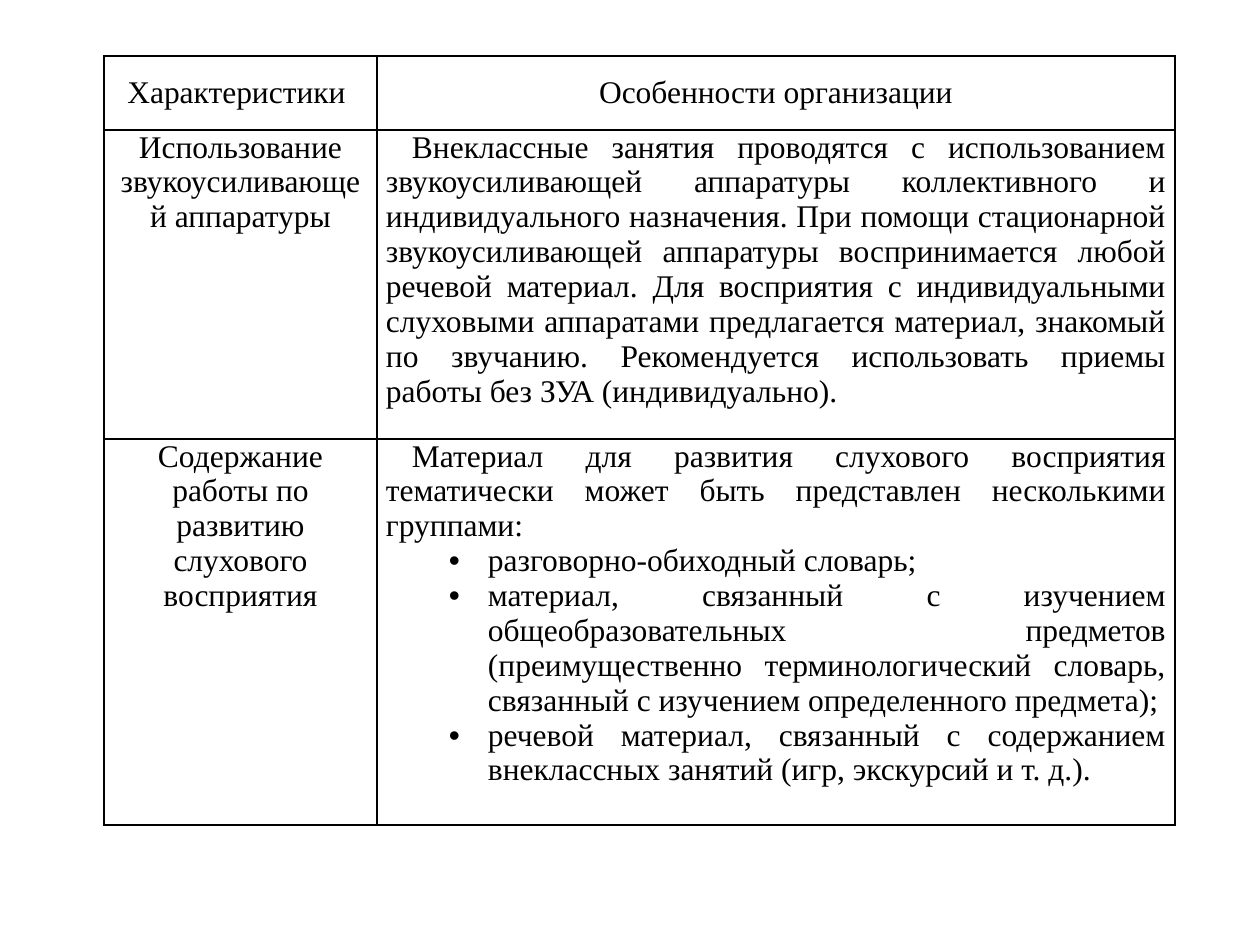
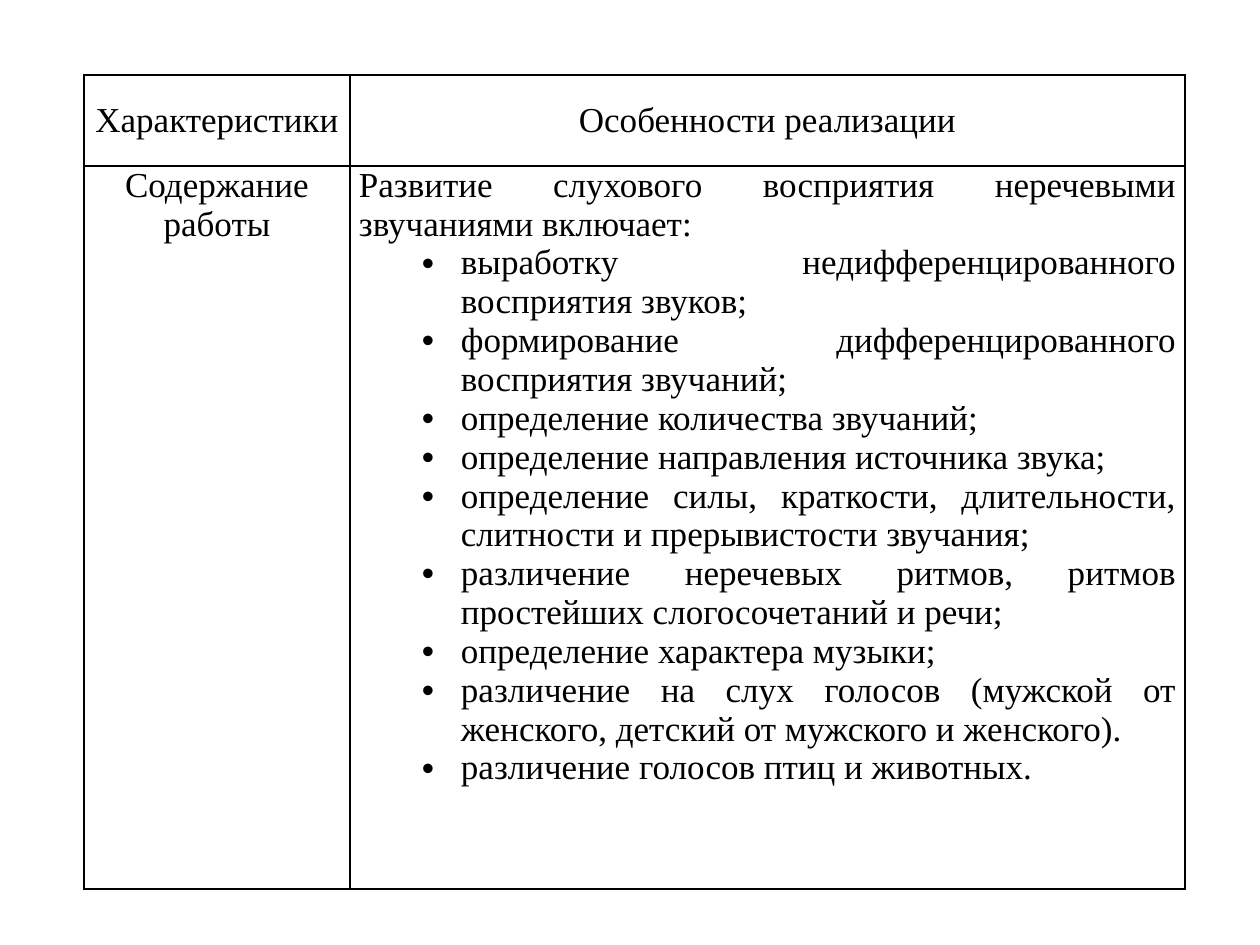
from lxml import etree
from pptx import Presentation
from pptx import util as u
from pptx.dml.color import RGBColor
from pptx.enum import text
from pptx.oxml import ns

PIXELS_PER_INCH = 126
BLACK = RGBColor(0x00, 0x00, 0x00)
FONT = "Times New Roman"
CELL_INSET = 9
FIRST_LINE = 26
BULLET_MARGIN, BULLET_HANG = 102, -39
CENTER, JUSTIFY = text.PP_ALIGN.CENTER, text.PP_ALIGN.JUSTIFY


def px(length):
    return u.Emu(round(length * u.Inches(1) / PIXELS_PER_INCH))


# Table formatting
def add_borders(cell):
    properties = cell._tc.get_or_add_tcPr()
    for side in ("lnL", "lnR", "lnT", "lnB"):
        line = etree.SubElement(properties, ns.qn(f"a:{side}"), w=str(u.Pt(1)))
        fill = etree.SubElement(line, ns.qn("a:solidFill"))
        etree.SubElement(fill, ns.qn("a:srgbClr"), val=str(BLACK))


def set_indent(paragraph, margin, indent):
    properties = paragraph._p.get_or_add_pPr()
    properties.set("marL", str(px(margin)))
    properties.set("indent", str(px(indent)))
    return properties


def add_bullet(paragraph):
    paragraph.level = 1
    properties = set_indent(paragraph, BULLET_MARGIN, BULLET_HANG)
    etree.SubElement(properties, ns.qn("a:buFont"), typeface="Arial")
    etree.SubElement(properties, ns.qn("a:buChar"), char="•")


def fill_cell(cell, lines, size, alignment, first_line=0, anchor=text.MSO_ANCHOR.TOP):
    """Write an opening paragraph, then any further lines as bullets."""
    add_borders(cell)
    cell.fill.background()
    cell.margin_left = cell.margin_right = px(CELL_INSET)
    cell.margin_top = cell.margin_bottom = 0
    cell.vertical_anchor = anchor
    cell.text_frame.text = "\n".join(lines)
    for index, paragraph in enumerate(cell.text_frame.paragraphs):
        paragraph.alignment = alignment
        if index:
            add_bullet(paragraph)
        else:
            set_indent(paragraph, 0, first_line)
        for run in paragraph.runs:
            run.font.name = FONT
            run.font.size = u.Pt(size)
            run.font.color.rgb = BLACK


def add_table_slide(presentation, position, widths, heights, header, rows, size, first_line=0):
    slide = presentation.slides.add_slide(presentation.slide_layouts[6])
    left, top = position
    frame = slide.shapes.add_table(len(heights), len(widths), px(left), px(top),
                                   px(sum(widths)), px(sum(heights)))
    table = frame.table
    table.first_row = table.horz_banding = False
    for column, width in zip(table.columns, widths):
        column.width = px(width)
    for row, height in zip(table.rows, heights):
        row.height = px(height)

    # Header, then one row per characteristic
    for index, title in enumerate(header):
        fill_cell(table.cell(0, index), [title], size, CENTER, anchor=text.MSO_ANCHOR.MIDDLE)
    for index, (characteristic, features) in enumerate(rows, 1):
        fill_cell(table.cell(index, 0), [characteristic], size, CENTER)
        fill_cell(table.cell(index, 1), features, size, JUSTIFY, first_line)


# Content
ORGANIZATION_ROWS = [
    ("Использование звукоусиливающей аппаратуры", [
        "Внеклассные занятия проводятся с использованием звукоусиливающей аппаратуры "
        "коллективного и индивидуального назначения. При помощи стационарной "
        "звукоусиливающей аппаратуры воспринимается любой речевой материал. Для восприятия "
        "с индивидуальными слуховыми аппаратами предлагается материал, знакомый по звучанию. "
        "Рекомендуется использовать приемы работы без ЗУА (индивидуально).",
    ]),
    ("Содержание работы по развитию слухового восприятия", [
        "Материал для развития слухового восприятия тематически может быть представлен "
        "несколькими группами:",
        "разговорно-обиходный словарь;",
        "материал, связанный с изучением общеобразовательных предметов (преимущественно "
        "терминологический словарь, связанный с изучением определенного предмета);",
        "речевой материал, связанный с содержанием внеклассных занятий (игр, экскурсий и т. д.).",
    ]),
]
REALIZATION_ROWS = [
    ("Содержание работы", [
        "Развитие слухового восприятия неречевыми звучаниями включает:",
        "выработку недифференцированного восприятия звуков;",
        "формирование дифференцированного восприятия звучаний;",
        "определение количества звучаний;",
        "определение направления источника звука;",
        "определение силы, краткости, длительности, слитности и прерывистости звучания;",
        "различение неречевых ритмов, ритмов простейших слогосочетаний и речи;",
        "определение характера музыки;",
        "различение на слух голосов (мужской от женского, детский от мужского и женского).",
        "различение голосов птиц и животных.",
    ]),
]


def main():
    presentation = Presentation()
    presentation.slide_width, presentation.slide_height = px(1260), px(945)
    add_table_slide(presentation, (104, 56), (273, 798), (74, 309, 386),
                    ("Характеристики ", "Особенности организации"),
                    ORGANIZATION_ROWS, size=18, first_line=FIRST_LINE)
    add_table_slide(presentation, (84, 75), (266, 835), (91, 723),
                    ("Характеристики ", "Особенности реализации"),
                    REALIZATION_ROWS, size=20)
    presentation.save("out.pptx")


if __name__ == "__main__":
    main()
